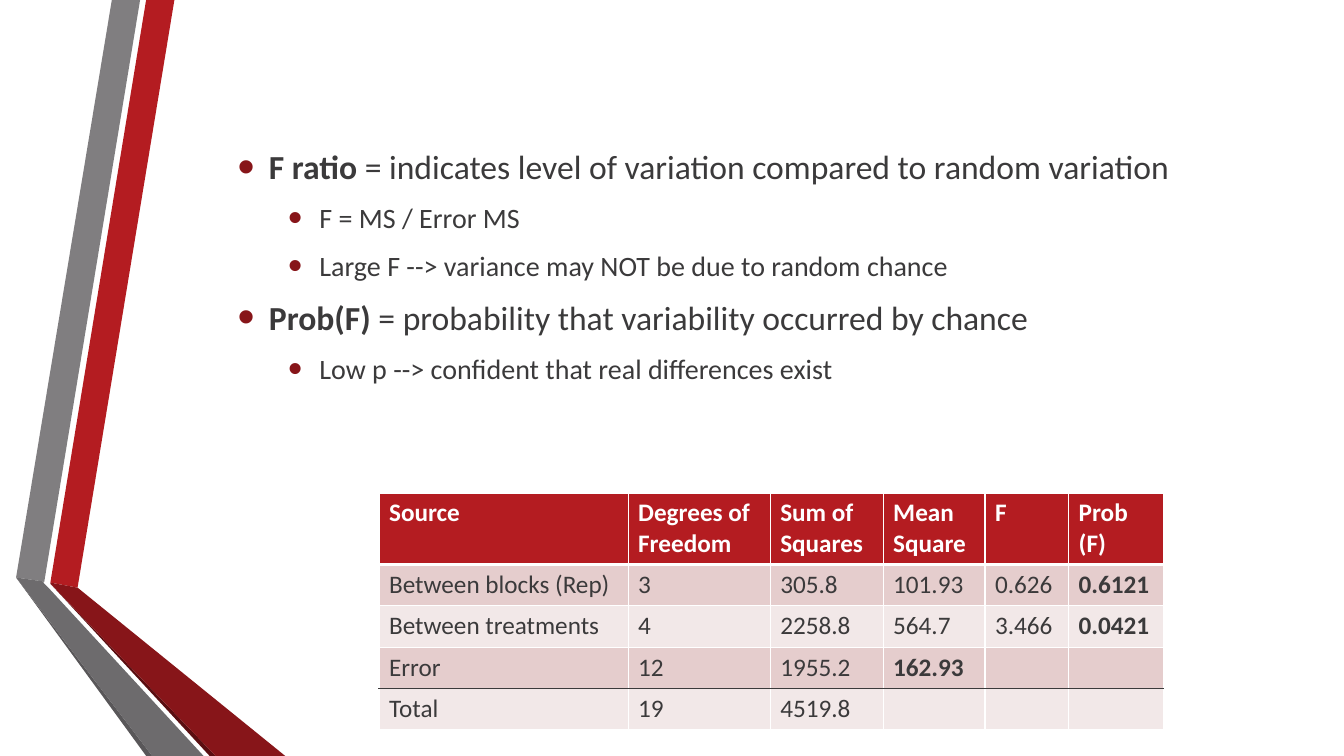
from lxml.etree import SubElement
from pptx import Presentation
from pptx.dml.color import RGBColor
from pptx.enum.text import MSO_ANCHOR
from pptx.oxml.ns import qn
from pptx.util import Inches, Pt

FONT = "Calibri"
COLORS = {
    "red": "B41C21", "dark red": "871519", "deep red": "5A0E11",
    "gray": "807E80", "dark gray": "6D6B6D", "deep gray": "595759",
    "text": "3B3A3B", "white": "FFFFFF", "band": "E5CDCD", "pale band": "F2E8E8",
}
RIBBONS = [
    ("red", [(0.5, 5.78), (0.77, 5.83), (1.73, 0), (1.45, 0)]),
    ("gray", [(1.39, 0), (1.11, 0), (0.16, 5.73), (0.44, 5.77)]),
    ("deep gray", [(0.16, 5.73), (1.45, 7.5), (1.51, 7.5)]),
    ("deep red", [(0.5, 5.79), (2.08, 7.5), (2.14, 7.5)]),
    ("dark red", [(0.5, 5.78), (0.5, 5.79), (2.14, 7.5), (2.83, 7.5), (0.77, 5.83)]),
    ("dark gray", [(2.02, 7.5), (0.48, 5.83), (0.43, 5.78), (0.44, 5.77),
                   (0.16, 5.73), (1.51, 7.5)]),
]
BULLETS = [
    (0, "F ratio ", "= indicates level of variation compared to random variation"),
    (1, "", "F = MS / Error MS"),
    (1, "", "Large F --> variance may NOT be due to random chance"),
    (0, "Prob(F) ", "= probability that variability occurred by chance"),
    (1, "", "Low p --> confident that real differences exist"),
]
ANOVA = [
    ["Source", "Degrees of\vFreedom", "Sum of\nSquares", "Mean\vSquare", "F", "Prob\v(F)"],
    ["Between blocks (Rep)", "3", "305.8", "101.93", "0.626", "0.6121"],
    ["Between treatments", "4", "2258.8", "564.7", "3.466", "0.0421"],
    ["Error", "12", "1955.2", "162.93", "", ""],
    ["Total", "19", "4519.8", "", "", ""],
]
BOLD_VALUES = {"0.6121", "0.0421", "162.93"}
COLUMN_WIDTHS = [2.47, 1.41, 1.12, 1.01, 0.83, 0.94]
ROW_HEIGHTS = [0.68] + [0.41] * 4
ERROR_ROW, TOTAL_ROW = 3, 4


def rgb(name):
    return RGBColor.from_string(COLORS[name])


def set_font(font, size, color, bold=False):
    font.name, font.size, font.bold = FONT, Pt(size), bold
    font.color.rgb = rgb(color)


def add_ribbon(page, color, points):
    (left, top), *others = [(Inches(x), Inches(y)) for x, y in points]
    builder = page.shapes.build_freeform(left, top)
    builder.add_line_segments(others, close=True)
    ribbon = builder.convert_to_shape()
    ribbon.shadow.inherit = False
    ribbon.fill.solid()
    ribbon.fill.fore_color.rgb = rgb(color)
    ribbon.line.fill.background()


def add_bullet(para, level):
    properties = para._p.get_or_add_pPr()
    properties.set("marL", str(Inches(0.31 + 0.5 * level)))
    properties.set("indent", str(Inches(-0.31)))
    color = SubElement(properties, qn("a:buClr"))
    SubElement(color, qn("a:srgbClr"), val=COLORS["dark red"])
    SubElement(properties, qn("a:buSzPct"), val="145000")
    SubElement(properties, qn("a:buFont"), typeface="Arial")
    SubElement(properties, qn("a:buChar"), char="•")


def add_explanation(page):
    box = page.shapes.add_textbox(Inches(2.26), Inches(0.51), Inches(10.76), Inches(4.25))
    frame = box.text_frame
    frame.word_wrap = True
    frame.vertical_anchor = MSO_ANCHOR.MIDDLE
    for index, (level, term, meaning) in enumerate(BULLETS):
        para = frame.add_paragraph() if index else frame.paragraphs[0]
        size = 20 if level else 24
        para.level = level
        add_bullet(para, level)
        para.space_before = Pt(0.2 * size if index else 0)
        para.space_after = Pt(6)
        set_font(para.font, size, "text")
        if term:
            span = para.add_run()
            span.text = term
            span.font.bold = True
        para.add_run().text = meaning


def add_border(cell, side, color, points):
    line = SubElement(cell._tc.get_or_add_tcPr(), qn(f"a:ln{side}"), w=str(Pt(points)))
    fill = SubElement(line, qn("a:solidFill"))
    SubElement(fill, qn("a:srgbClr"), val=COLORS[color])


def style_cell(cell, row, value):
    top = ("text", 1) if row == TOTAL_ROW else ("white", 3 if row == 1 else 1)
    bottom = ("text", 1) if row == ERROR_ROW else ("white", 1 if row else 3)
    for side, border in zip("LRTB", [("white", 1), ("white", 1), top, bottom]):
        add_border(cell, side, *border)
    cell.fill.solid()
    cell.fill.fore_color.rgb = rgb(("band" if row % 2 else "pale band") if row else "red")
    cell.text = value
    for para in cell.text_frame.paragraphs:
        set_font(para.font, 18, "text" if row else "white", row == 0 or value in BOLD_VALUES)


def add_anova_table(page):
    table = page.shapes.add_table(
        len(ANOVA), len(COLUMN_WIDTHS), Inches(3.76), Inches(4.89),
        Inches(sum(COLUMN_WIDTHS)), Inches(sum(ROW_HEIGHTS))).table
    for column, width in zip(table.columns, COLUMN_WIDTHS):
        column.width = Inches(width)
    for row, values in enumerate(ANOVA):
        table.rows[row].height = Inches(ROW_HEIGHTS[row])
        for column, value in enumerate(values):
            style_cell(table.cell(row, column), row, value)


def main():
    """Build the slide on the F ratio and its analysis of variance table."""
    deck = Presentation()
    deck.slide_width, deck.slide_height = Inches(13.33), Inches(7.5)
    page = deck.slides.add_slide(deck.slide_layouts[6])
    for color, points in RIBBONS:
        add_ribbon(page, color, points)
    add_anova_table(page)
    add_explanation(page)
    deck.save("out.pptx")


if __name__ == "__main__":
    main()
